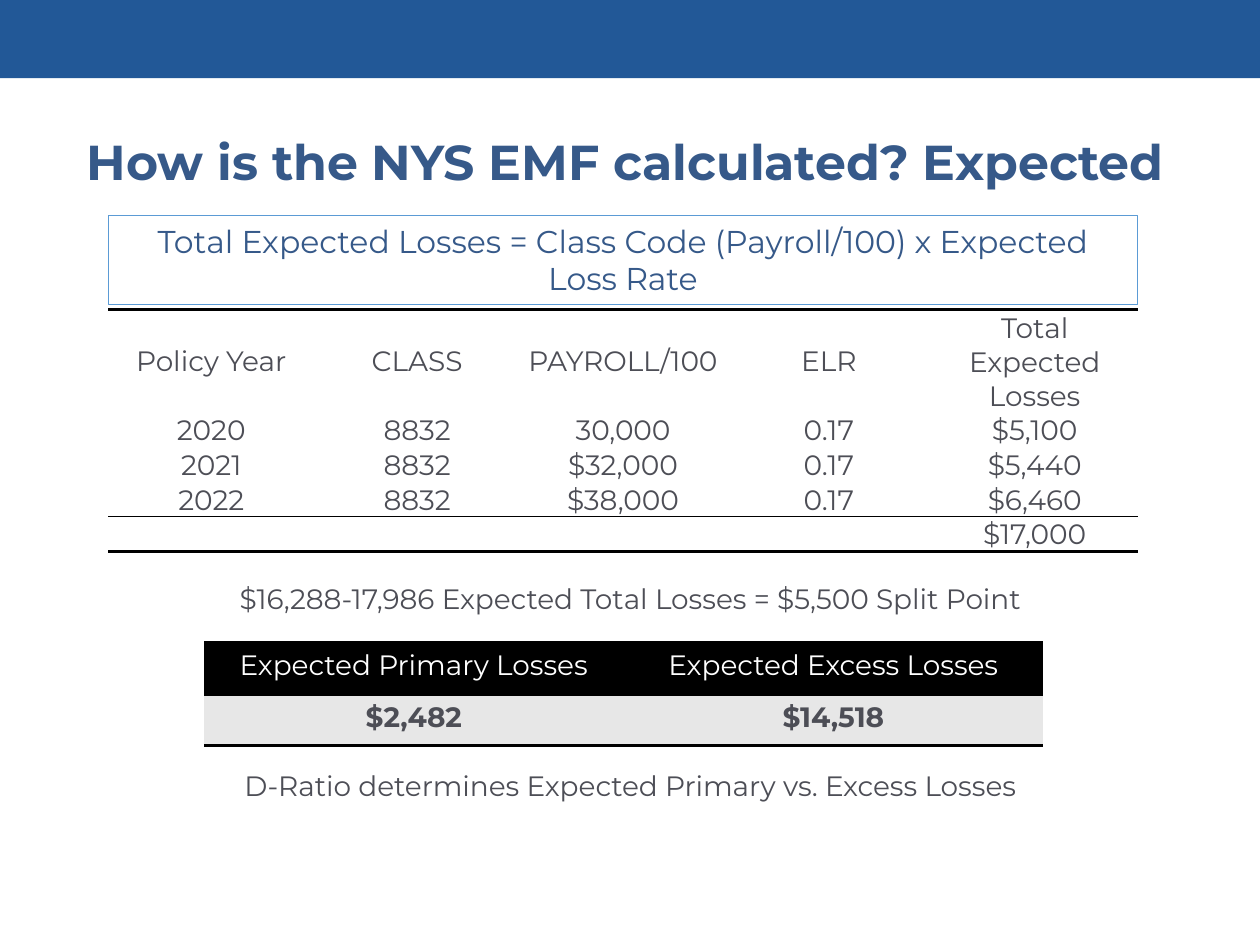
import lxml.etree
import pptx
import pptx.dml.color
import pptx.enum.shapes
import pptx.enum.text
import pptx.oxml.ns
import pptx.util

Inches = pptx.util.Inches
Pt = pptx.util.Pt
ALIGN = pptx.enum.text.PP_ALIGN
ANCHOR = pptx.enum.text.MSO_ANCHOR

FONT = "Montserrat"
BLUE = "365989"
GREY = "4D4E56"
BLACK = "000000"
WHITE = "FFFFFF"
NO_GRID_STYLE = "{2D5ABB26-0587-4C30-8999-92F81FD0307C}"

LOSS_ROWS = [
    ["Policy Year", "CLASS", "PAYROLL/100", "ELR", "Total Expected Losses"],
    ["2020", "8832", "30,000", "0.17", "$5,100"],
    ["2021", "8832", "$32,000", "0.17", "$5,440"],
    ["2022", "8832", "$38,000", "0.17", "$6,460"],
    ["", "", "", "", "$17,000"],
]
SPLIT_ROWS = [
    ["Expected Primary Losses", "Expected Excess Losses"],
    ["$2,482", "$14,518"],
]


def color(value):
    return pptx.dml.color.RGBColor.from_string(value)


def add_xml(parent, tag, **attributes):
    return lxml.etree.SubElement(parent, pptx.oxml.ns.qn(tag), attributes)


def write_text(frame, text, size=16, text_color=GREY, bold=False, align=ALIGN.CENTER):
    paragraph = frame.paragraphs[0]
    paragraph.alignment = align
    if not text:
        # An empty cell still needs its text size, or its row grows
        add_xml(paragraph._p, "a:endParaRPr", sz=str(size * 100))
        return
    run = paragraph.add_run()
    run.text = text
    run.font.name = FONT
    run.font.size = Pt(size)
    run.font.bold = bold
    run.font.color.rgb = color(text_color)


def set_title(slide, text):
    title = slide.shapes.title
    title.left, title.top = Inches(0.59), Inches(1.05)
    title.width, title.height = Inches(8.98), Inches(0.75)
    frame = title.text_frame
    frame.vertical_anchor = ANCHOR.TOP
    frame.auto_size = pptx.enum.text.MSO_AUTO_SIZE.NONE
    frame.paragraphs[0].line_spacing = 0.9
    write_text(frame, text, size=28, text_color=BLUE, bold=True, align=ALIGN.LEFT)


def add_band(slide, width, height, fill):
    band = slide.shapes.add_shape(
        pptx.enum.shapes.MSO_SHAPE.RECTANGLE, 0, 0, width, height)
    band.shadow.inherit = False
    band.fill.solid()
    band.fill.fore_color.rgb = color(fill)
    band.line.fill.background()


def add_text(slide, text, left, top, width, height, outline=None, **text_format):
    box = slide.shapes.add_textbox(
        Inches(left), Inches(top), Inches(width), Inches(height))
    box.text_frame.word_wrap = True
    if outline:
        box.line.color.rgb = color(outline)
        box.line.width = Pt(0.75)
    write_text(box.text_frame, text, **text_format)


def format_cell(cell, fill, top=0, bottom=0):
    """Set the fill and the top and bottom border widths in points."""
    properties = cell._tc.get_or_add_tcPr()
    for tag, width in (("a:lnT", top), ("a:lnB", bottom)):
        if width:
            line = add_xml(properties, tag, w=str(Pt(width)))
            add_xml(add_xml(line, "a:solidFill"), "a:srgbClr", val=BLACK)
    cell.fill.solid()
    cell.fill.fore_color.rgb = color(fill)


def add_table(slide, rows, left, top, column_width, row_heights):
    width = column_width * len(rows[0])
    table = slide.shapes.add_table(
        len(rows), len(rows[0]), Inches(left), Inches(top),
        Inches(width), Inches(sum(row_heights))).table
    table.first_row = table.horz_banding = False
    style = table._tbl.tblPr.find(pptx.oxml.ns.qn("a:tableStyleId"))
    style.text = NO_GRID_STYLE
    for column in table.columns:
        column.width = Inches(column_width)
    for row, height in zip(table.rows, row_heights):
        row.height = Inches(height)
    return table


def add_loss_table(slide):
    table = add_table(slide, LOSS_ROWS, 0.86, 2.46, 1.634, [0.81] + [0.275] * 4)
    # Top and bottom rules by row
    rules = {0: (2, 0), 3: (0, 1), 4: (1, 2)}
    for row_index, values in enumerate(LOSS_ROWS):
        for column_index, value in enumerate(values):
            cell = table.cell(row_index, column_index)
            cell.margin_left = cell.margin_right = cell.margin_top = Inches(0.01)
            cell.margin_bottom = 0
            cell.vertical_anchor = ANCHOR.BOTTOM if row_index else ANCHOR.MIDDLE
            write_text(cell.text_frame, value)
            format_cell(cell, WHITE, *rules.get(row_index, (0, 0)))


def add_split_table(slide):
    table = add_table(slide, SPLIT_ROWS, 1.62, 5.1, 3.33, [0.41, 0.41])
    for column_index, (heading, amount) in enumerate(zip(*SPLIT_ROWS)):
        header = table.cell(0, column_index)
        write_text(header.text_frame, heading, text_color=WHITE)
        format_cell(header, BLACK, top=2, bottom=2)
        body = table.cell(1, column_index)
        write_text(body.text_frame, amount, bold=True)
        format_cell(body, "E7E7E7", top=2, bottom=2)


def main():
    presentation = pptx.Presentation()
    presentation.slide_width = Inches(10)
    presentation.slide_height = Inches(7.5)
    slide = presentation.slides.add_slide(presentation.slide_layouts[5])

    # Heading
    add_band(slide, presentation.slide_width, Inches(0.62), "225897")
    set_title(slide, "How is the NYS EMF calculated? Expected")

    # Formula and yearly losses
    add_text(slide, "Total Expected Losses = Class Code (Payroll/100) x Expected Loss Rate",
             0.86, 1.71, 8.17, 0.71, outline="5B9BD5", size=18, text_color=BLUE)
    add_loss_table(slide)

    # Split into primary and excess losses
    add_text(slide, "$16,288-17,986 Expected Total Losses = $5,500 Split Point",
             0.83, 4.57, 8.35, 0.37)
    add_split_table(slide)
    add_text(slide, "D-Ratio determines Expected Primary vs. Excess Losses",
             0.83, 6.05, 8.35, 0.37)

    presentation.save("out.pptx")


if __name__ == "__main__":
    main()
